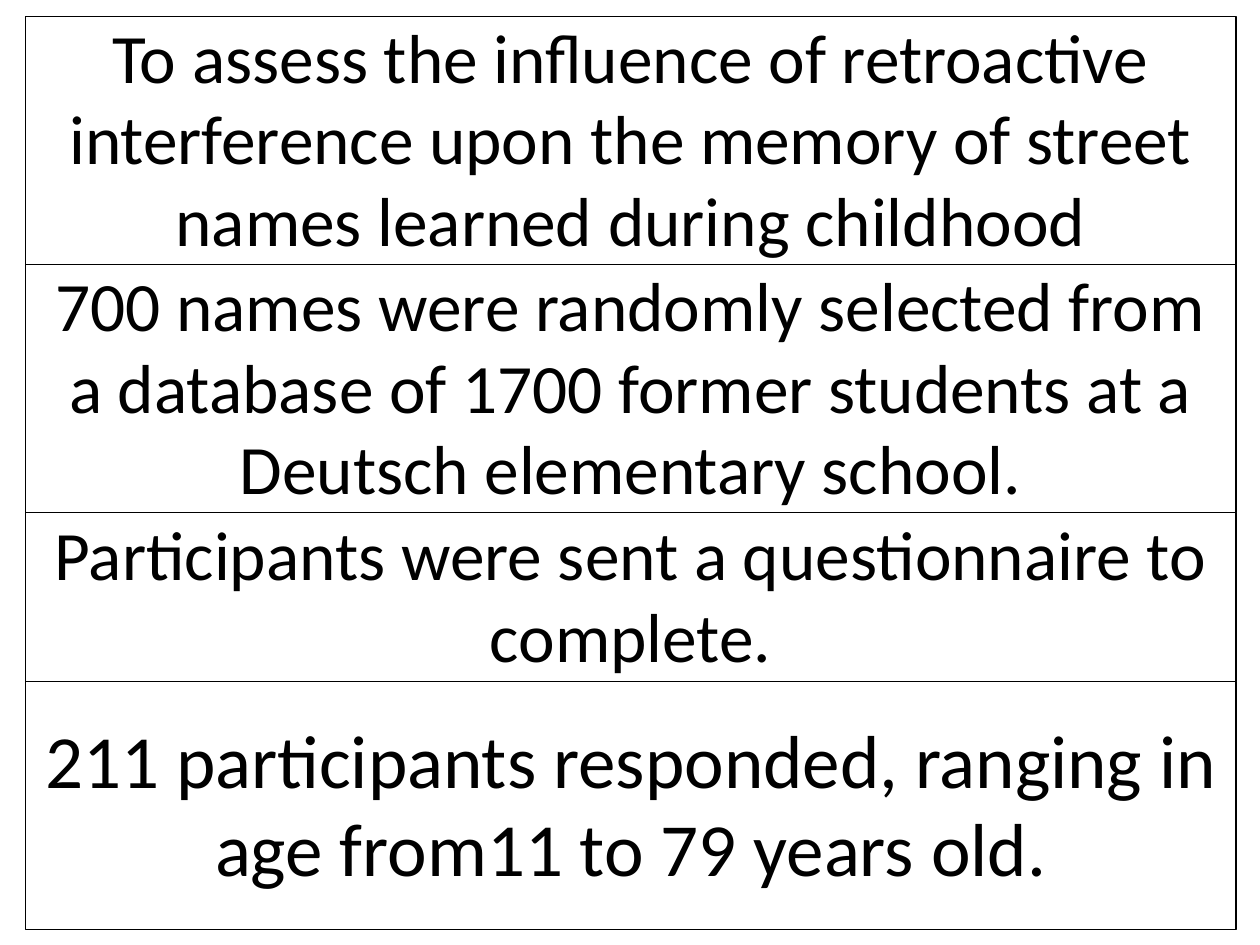
import pptx
import pptx.util
import pptx.dml.color
import pptx.enum.shapes
import pptx.enum.text

Inches, Pt = pptx.util.Inches, pptx.util.Pt
COLORS = {"paper": "FFFFFF", "ink": "000000"}
FONT = "Calibri"
LEFT, TOP, WIDTH = 0.2, 0.13, 9.61
TALL, SHORT = 1.97, 1.34

# text, box height in inches, font size in points
STEPS = [
    ("To assess the influence of retroactive interference upon the memory "
     "of street names learned during childhood", TALL, 39.6),
    ("700 names were randomly selected from a database of 1700 former "
     "students at a Deutsch elementary school.", TALL, 39.6),
    ("Participants were sent a questionnaire to complete.", SHORT, 39.6),
    ("211 participants responded, ranging in age from11 to 79 years old.",
     TALL, 42.9),
]


def color(name):
    return pptx.dml.color.RGBColor.from_string(COLORS[name])


def format_box(shape, text, size):
    shape.fill.background()
    shape.line.color.rgb = color("ink")
    shape.line.width = Pt(0.75)
    frame = shape.text_frame
    frame.text = text
    frame.word_wrap = True
    frame.auto_size = pptx.enum.text.MSO_AUTO_SIZE.NONE
    frame.vertical_anchor = pptx.enum.text.MSO_ANCHOR.MIDDLE
    paragraph = frame.paragraphs[0]
    paragraph.alignment = pptx.enum.text.PP_ALIGN.CENTER
    paragraph.line_spacing = 0.98
    font = paragraph.runs[0].font
    font.name = FONT
    font.size = Pt(size)
    font.color.rgb = color("ink")


def main():
    presentation = pptx.Presentation()
    presentation.slide_width = Inches(10)
    presentation.slide_height = Inches(7.5)
    slide = presentation.slides.add_slide(presentation.slide_layouts[5])
    slide.background.fill.solid()
    slide.background.fill.fore_color.rgb = color("paper")

    top = TOP
    for index, (text, height, size) in enumerate(STEPS):
        place = [Inches(length) for length in (LEFT, top, WIDTH, height)]
        if index == 0:
            shape = slide.shapes.title
            shape.left, shape.top, shape.width, shape.height = place
        else:
            shape = slide.shapes.add_shape(
                pptx.enum.shapes.MSO_SHAPE.RECTANGLE, *place)
            shape.shadow.inherit = False
        format_box(shape, text, size)
        top += height

    presentation.save("out.pptx")


if __name__ == "__main__":
    main()
